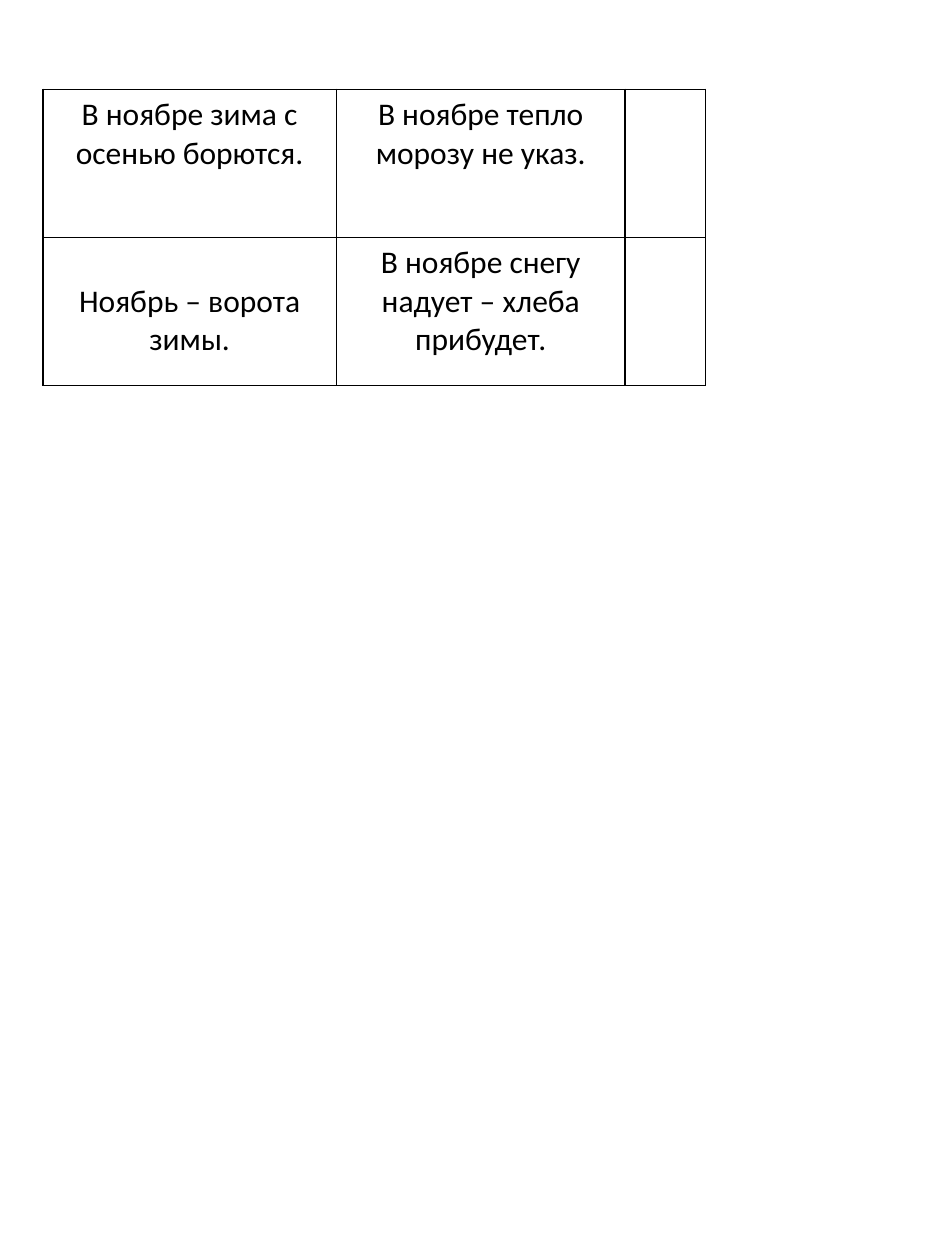
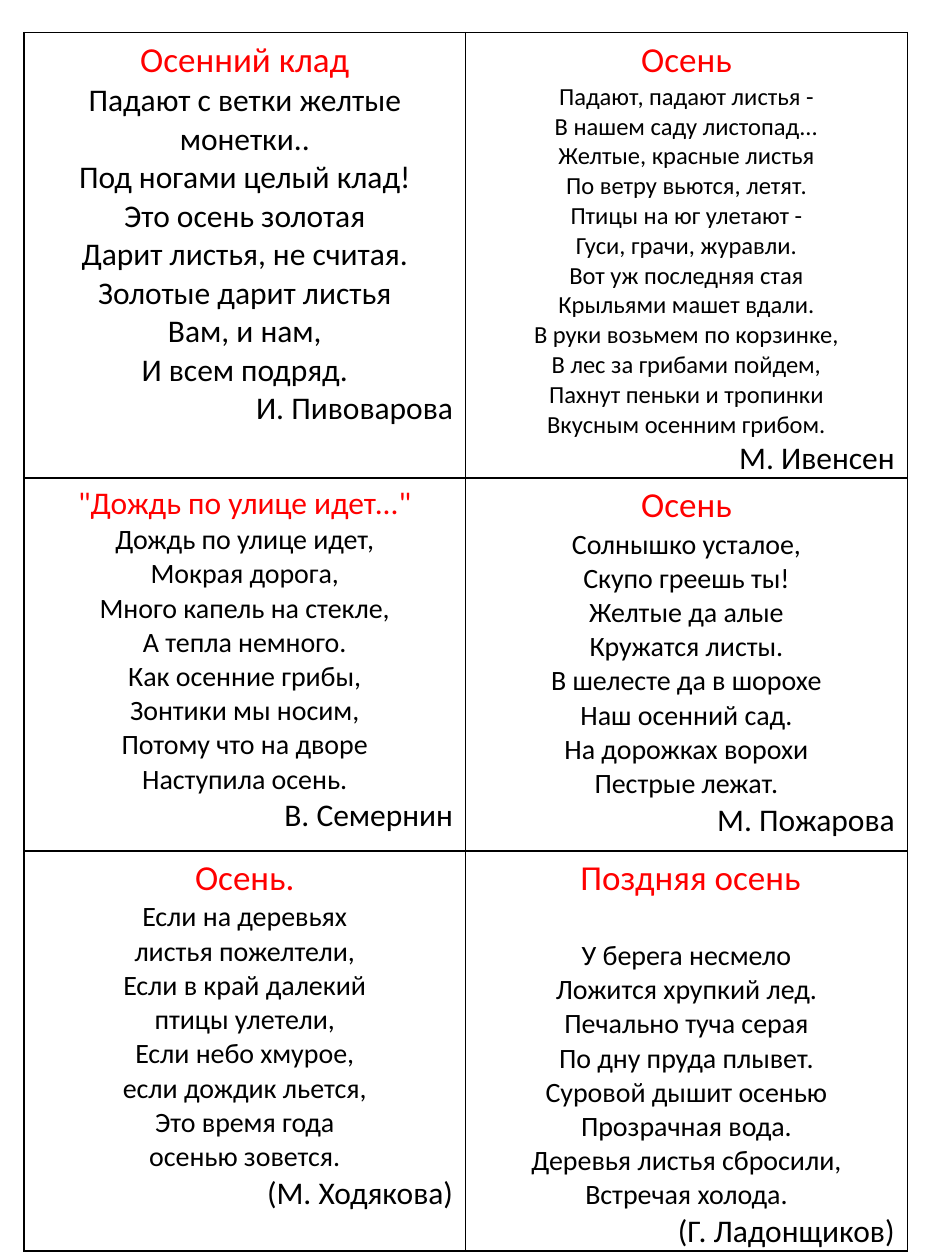
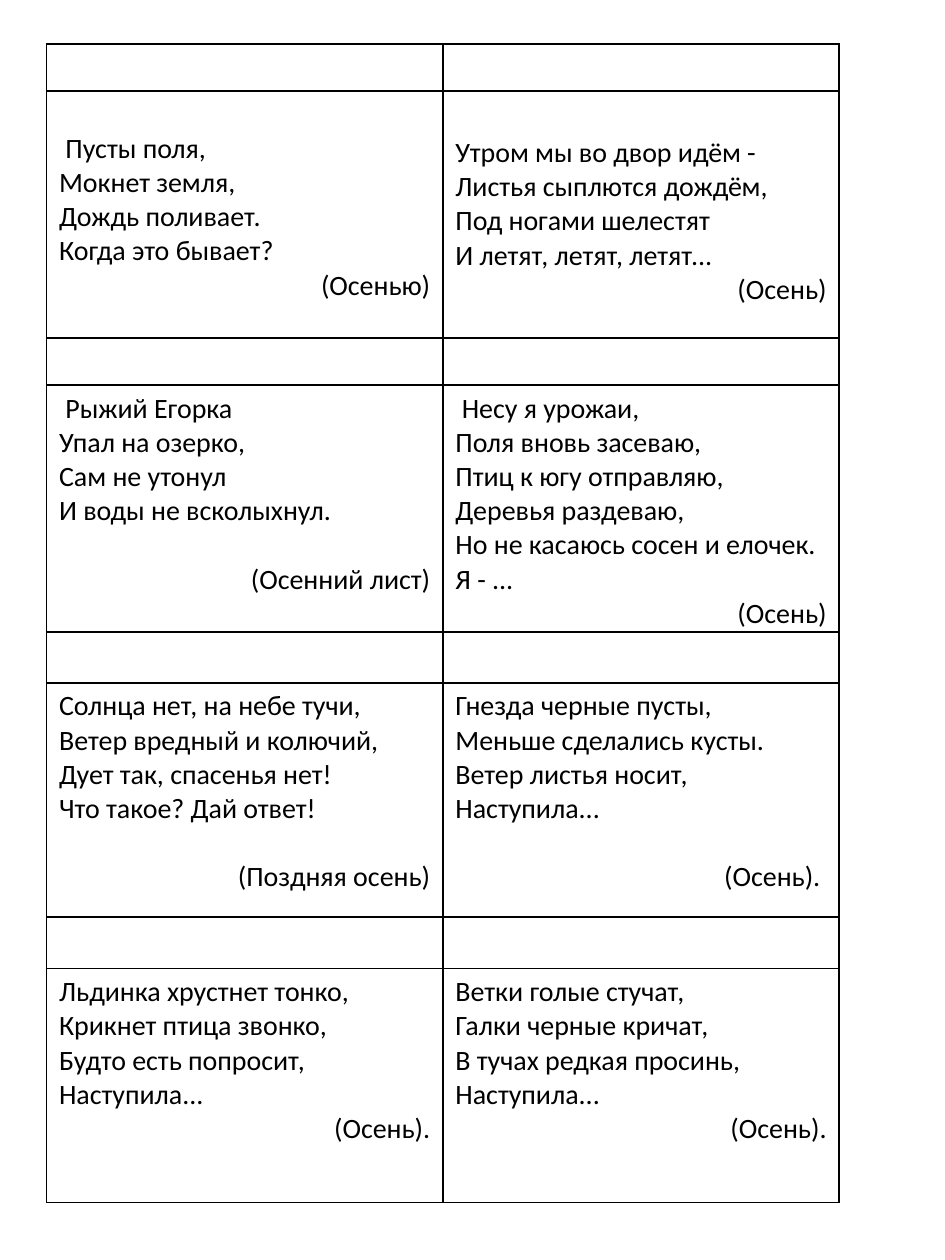
from collections import namedtuple

from lxml.etree import SubElement
from pptx import Presentation
from pptx.dml.color import RGBColor
from pptx.enum.text import PP_ALIGN as Align
from pptx.oxml.ns import qn
from pptx.util import Pt

FONT = "Calibri"
BLACK = RGBColor(0x00, 0x00, 0x00)
RED = RGBColor(0xFF, 0x00, 0x00)
LINE = 1.22      # line height of the font, in ems
MARGIN_TOP = 3.6
BORDER = 1

# gap: size of the empty line left above the paragraph
Para = namedtuple("Para", "text size align color gap", defaults=(BLACK, 0))
Box = namedtuple("Box", "left top cols rows")

PROVERBS = [
    [("В ноябре зима с осенью борются.", 0),
     ("В ноябре тепло морозу не указ.", 0), None],
    [("Ноябрь – ворота зимы.", 18),
     ("В ноябре снегу надует – хлеба прибудет.", 0), None],
]

# title, title size, verse, verse size, author, gap under the title
POEMS = [
    [("Осенний клад", 20, """Падают с ветки желтые монетки..
Под ногами целый клад!
Это осень золотая
Дарит листья, не считая.
Золотые дарит листья
Вам, и нам,
И всем подряд.""", 18, "И. Пивоварова", 0),
     ("Осень", 20, """Падают, падают листья -
В нашем саду листопад...
Желтые, красные листья
По ветру вьются, летят.
Птицы на юг улетают -
Гуси, грачи, журавли.
Вот уж последняя стая
Крыльями машет вдали.
В руки возьмем по корзинке,
В лес за грибами пойдем,
Пахнут пеньки и тропинки
Вкусным осенним грибом.""", 14, "М. Ивенсен", 0)],
    [('"Дождь по улице идет..."', 18, """Дождь по улице идет,
Мокрая дорога,
Много капель на стекле,
А тепла немного.
Как осенние грибы,
Зонтики мы носим,
Потому что на дворе
Наступила осень.""", 16, "В. Семернин", 0),
     ("Осень", 20, """Солнышко усталое,
Скупо греешь ты!
Желтые да алые
Кружатся листы.
В шелесте да в шорохе
Наш осенний сад.
На дорожках ворохи
Пестрые лежат.""", 16, "М. Пожарова", 0)],
    [("Осень.", 20, """Если на деревьях
листья пожелтели,
Если в край далекий
птицы улетели,
Если небо хмурое,
если дождик льется,
Это время года
осенью зовется.""", 16, "(М. Ходякова)", 0),
     (" Поздняя осень", 20, """У берега несмело
Ложится хрупкий лед.
Печально туча серая
По дну пруда плывет.
Суровой дышит осенью
Прозрачная вода.
Деревья листья сбросили,
Встречая холода.""", 16, "(Г. Ладонщиков)", 18)],
]

# verse, answer, gap above the verse, gap above the answer
RIDDLES = [
    [(""" Пусты поля,
Мокнет земля,
Дождь поливает.
Когда это бывает?""", "(Осенью)", 16, 0),
     ("""Утром мы во двор идём -
Листья сыплются дождём,
Под ногами шелестят
И летят, летят, летят...""", "(Осень)", 18, 0)],
    [(""" Рыжий Егорка
Упал на озерко,
Сам не утонул
И воды не всколыхнул.""", "(Осенний лист)", 0, 16),
     (""" Несу я урожаи,
Поля вновь засеваю,
Птиц к югу отправляю,
Деревья раздеваю,
Но не касаюсь сосен и елочек.
Я - ...""", "(Осень)", 0, 0)],
    [("""Солнца нет, на небе тучи,
Ветер вредный и колючий,
Дует так, спасенья нет!
Что такое? Дай ответ!""", "(Поздняя осень)", 0, 16),
     ("""Гнезда черные пусты,
Меньше сделались кусты.
Ветер листья носит,
Наступила...""", "(Осень). ", 0, 16)],
    [("""Льдинка хрустнет тонко,
Крикнет птица звонко,
Будто есть попросит,
Наступила...""", "(Осень).", 0, 0),
     ("""Ветки голые стучат,
Галки черные кричат,
В тучах редкая просинь,
Наступила...""", "(Осень).", 0, 0)],
]


def style_cell(cell):
    """Thin black border on all sides, no fill."""
    tcPr = cell._tc.get_or_add_tcPr()
    for side in ("lnL", "lnR", "lnT", "lnB"):
        ln = SubElement(tcPr, qn(f"a:{side}"), w=str(Pt(BORDER)))
        fill = SubElement(ln, qn("a:solidFill"))
        SubElement(fill, qn("a:srgbClr"), val=str(BLACK))
    cell.fill.background()
    cell.margin_top, cell.margin_bottom = Pt(MARGIN_TOP), Pt(0)


def write_cell(cell, paras):
    tf = cell.text_frame
    for i, para in enumerate(paras):
        p = tf.paragraphs[0] if i == 0 else tf.add_paragraph()
        p.text, p.alignment = para.text, para.align
        p.font.name, p.font.size = FONT, Pt(para.size)
        p.font.color.rgb = para.color
        gap = round(para.gap * LINE, 2)
        if i == 0:
            cell.margin_top = Pt(MARGIN_TOP + gap)
        elif gap:
            p.space_before = Pt(gap)


def add_grid(prs, box, content):
    """Add a slide with a bordered table; content is rows of paragraph lists."""
    slide = prs.slides.add_slide(prs.slide_layouts[6])
    table = slide.shapes.add_table(
        len(box.rows), len(box.cols), Pt(box.left), Pt(box.top),
        Pt(sum(box.cols)), Pt(sum(box.rows))).table
    table.first_row = table.horz_banding = False
    for col, width in zip(table.columns, box.cols):
        col.width = Pt(width)
    for row, height, cells in zip(table.rows, box.rows, content):
        row.height = Pt(height)
        for cell, paras in zip(row.cells, cells):
            style_cell(cell)
            write_cell(cell, paras)


def proverb_slide(prs, box):
    add_grid(prs, box, [
        [[Para(item[0], 18, Align.CENTER, gap=item[1])] if item else []
         for item in row] for row in PROVERBS])


def poem_paras(title, title_size, verse, size, author, gap):
    first, *rest = verse.split("\n")
    return [Para(title, title_size, Align.CENTER, RED),
            Para(first, size, Align.CENTER, gap=gap),
            *(Para(line, size, Align.CENTER) for line in rest),
            Para(author, 18, Align.RIGHT)]


def poem_slide(prs, box):
    add_grid(prs, box, [[poem_paras(*poem) for poem in row] for row in POEMS])


def riddle_paras(verse, answer, verse_gap, answer_gap):
    first, *rest = verse.split("\n")
    return [Para(first, 16, Align.LEFT, gap=verse_gap),
            *(Para(line, 16, Align.LEFT) for line in rest),
            Para(answer, 16, Align.RIGHT, gap=answer_gap)]


def riddle_slide(prs, box):
    # An empty strip stands above each row of riddles
    content = []
    for row in RIDDLES:
        content += [[[], []], [riddle_paras(*riddle) for riddle in row]]
    add_grid(prs, box, content)


def main():
    prs = Presentation()
    prs.slide_width, prs.slide_height = Pt(540), Pt(720)
    proverb_slide(prs, Box(24.5, 51.1, [167.8, 164.9, 46.1], [84.6] * 2))
    poem_slide(prs, Box(13.7, 18.7, [252.4] * 2, [254, 213.1, 228.2]))
    riddle_slide(prs, Box(26.6, 25.2, [226.5] * 2,
                          [26.9, 141.1, 26.9, 141.1, 29.1, 133.7, 29.7, 133.7]))
    prs.save("out.pptx")


if __name__ == "__main__":
    main()
